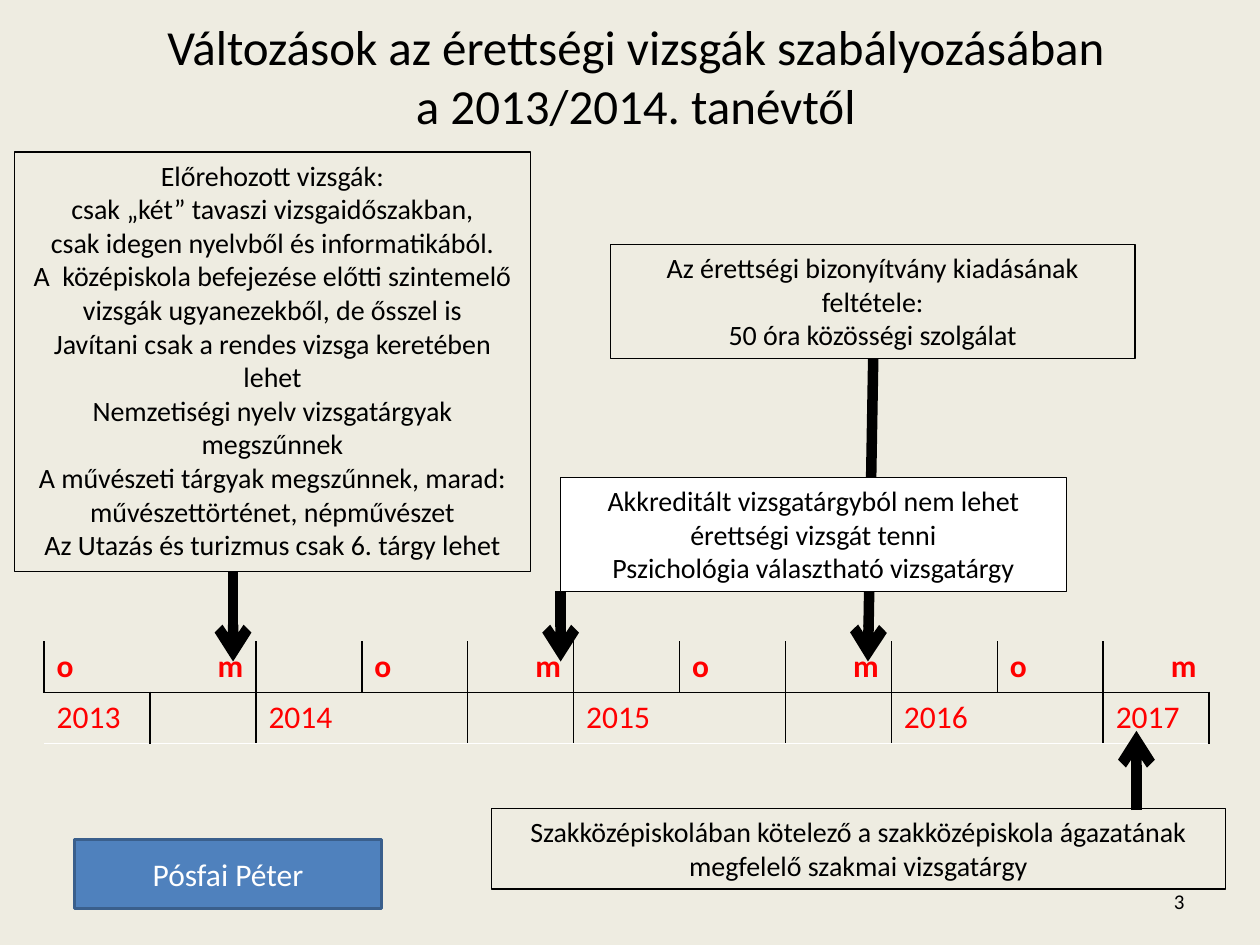
from lxml.etree import SubElement
from pptx import Presentation
from pptx.dml.color import RGBColor
from pptx.enum.shapes import MSO_CONNECTOR as Connector, MSO_SHAPE as Shape
from pptx.enum.text import MSO_ANCHOR as Anchor, MSO_AUTO_SIZE as AutoSize, PP_ALIGN as Align
from pptx.oxml.ns import qn
from pptx.util import Pt

COLORS = {"paper": "EEECE1", "ink": "000000", "exam": "FF0000",
          "white": "FFFFFF", "badge": "4F81BD", "badge_edge": "3A5F8C"}
FONT = "Calibri"
PLAIN_TABLE = "{2D5ABB26-0587-4C30-8999-92F81FD0307C}"

TITLE = ["Változások az érettségi vizsgák szabályozásában",
         "a 2013/2014. tanévtől"]
EARLY_EXAMS = ["Előrehozott vizsgák:",
               "csak „két” tavaszi vizsgaidőszakban,",
               "csak idegen nyelvből és informatikából.",
               "A  középiskola befejezése előtti szintemelő vizsgák "
               "ugyanezekből, de ősszel is",
               "Javítani csak a rendes vizsga keretében lehet",
               "Nemzetiségi nyelv vizsgatárgyak megszűnnek",
               "A művészeti tárgyak megszűnnek, marad: "
               "művészettörténet, népművészet",
               "Az Utazás és turizmus csak 6. tárgy lehet"]
SERVICE = ["Az érettségi bizonyítvány kiadásának feltétele:",
           "50 óra közösségi szolgálat"]
ACCREDITED = ["Akkreditált vizsgatárgyból nem lehet érettségi vizsgát tenni",
              "Pszichológia választható vizsgatárgy"]
VOCATIONAL = ["Szakközépiskolában kötelező a szakközépiskola ágazatának "
              "megfelelő szakmai vizsgatárgy"]

# Timeline: autumn (o) and spring (m) sessions, every third column
TERMS = 11
SESSIONS = {col: "om"[col % 3] for col in range(TERMS) if col % 3 < 2}
YEARS = {0: "2013", 2: "2014", 5: "2015", 8: "2016", 10: "2017"}
SESSION_EDGES = {0, 2, 3, 5, 6, 8, 9, 10}
YEAR_EDGES = {1, 4, 7, 10, 11}


def rgb(name):
    return RGBColor.from_string(COLORS[name])


def write(frame, lines, size, color="ink", align=Align.CENTER, bold=False):
    frame.text = "\n".join(lines)
    for paragraph in frame.paragraphs:
        paragraph.alignment = align
        for run in paragraph.runs:
            look = {"name": FONT, "size": Pt(size), "bold": bold}
            for attribute, value in look.items():
                setattr(run.font, attribute, value)
            run.font.color.rgb = rgb(color)


def place(shape, left, top, width, height):
    spot = {"left": left, "top": top, "width": width, "height": height}
    for attribute, value in spot.items():
        setattr(shape, attribute, Pt(value))


def add_box(slide, area, lines, size=16, fill=None, edge="ink", weight=0.75,
            color="ink", anchor=Anchor.TOP, fit=AutoSize.SHAPE_TO_FIT_TEXT):
    box = slide.shapes.add_shape(Shape.RECTANGLE, *map(Pt, area))
    box.shadow.inherit = False
    if fill:
        box.fill.solid()
        box.fill.fore_color.rgb = rgb(fill)
    else:
        box.fill.background()
    box.line.color.rgb = rgb(edge)
    box.line.width = Pt(weight)
    write(box.text_frame, lines, size, color)
    layout = {"word_wrap": True, "vertical_anchor": anchor, "auto_size": fit}
    for attribute, value in layout.items():
        setattr(box.text_frame, attribute, value)


def add_arrow(slide, start, end):
    arrow = slide.shapes.add_connector(Connector.STRAIGHT, *map(Pt, start + end))
    arrow.line.color.rgb = rgb("ink")
    arrow.line.width = Pt(6)
    properties = arrow.element.spPr
    SubElement(properties.find(qn("a:ln")), qn("a:tailEnd"), type="arrow")
    SubElement(properties, qn("a:effectLst"))


def set_borders(cell, borders):
    """borders maps L, R, T, B, in that order, to colour names."""
    properties = cell._tc.get_or_add_tcPr()
    for side, color in borders.items():
        line = SubElement(properties, qn(f"a:ln{side}"), w=str(Pt(1)))
        fill = SubElement(line, qn("a:solidFill"))
        SubElement(fill, qn("a:srgbClr"), val=COLORS[color])


def add_timeline(slide):
    frame = slide.shapes.add_table(2, TERMS, Pt(25.2), Pt(366.5),
                                   Pt(666), Pt(58.4))
    for style in frame.element.iter(qn("a:tableStyleId")):
        style.text = PLAIN_TABLE
    timeline = frame.table
    timeline.first_row = timeline.horz_banding = False
    rows = [(SESSIONS, SESSION_EDGES, {"B": "ink"}, True),
            (YEARS, YEAR_EDGES, {"T": "ink", "B": "white"}, False)]
    for row, (labels, edges, level_lines, bold) in enumerate(rows):
        for col in range(TERMS):
            cell = timeline.cell(row, col)
            sides = {side: "ink" for side, edge in (("L", col), ("R", col + 1))
                     if edge in edges}
            set_borders(cell, {**sides, **level_lines})
            cell.fill.background()
            label = labels.get(col, "")
            align = Align.RIGHT if label == "m" else Align.LEFT
            write(cell.text_frame, [label], 18, "exam", align, bold)


def main():
    prs = Presentation()
    prs.slide_width, prs.slide_height = Pt(720), Pt(540)
    slide = prs.slides.add_slide(prs.slide_layouts[5])
    slide.background.fill.solid()
    slide.background.fill.fore_color.rgb = rgb("paper")

    # Title
    title = slide.shapes.title
    place(title, 65.5, 9.4, 595.5, 67)
    write(title.text_frame, TITLE, 28)
    title.text_frame.auto_size = AutoSize.NONE
    title.text_frame.vertical_anchor = Anchor.MIDDLE

    # Timeline, with the arrows that point at its sessions
    add_arrow(slide, (499, 205), (496, 378))
    add_timeline(slide)
    add_arrow(slide, (133.2, 327), (133.2, 378))
    add_arrow(slide, (320.4, 338), (320.4, 378))
    add_arrow(slide, (649.4, 463), (649.4, 417.6))

    # Explanations of the changes
    add_box(slide, (8.4, 86.9, 294.7, 239.8), EARLY_EXAMS)
    add_box(slide, (348.7, 139.8, 300, 65.2), SERVICE)
    add_box(slide, (280.8, 462, 419.5, 46), VOCATIONAL)
    add_box(slide, (320.2, 272.9, 289.3, 65.2), ACCREDITED, fill="white")

    # Slide number and presenter
    number = slide.shapes.add_textbox(Pt(516), Pt(500.5), Pt(168), Pt(28.8))
    number.text_frame.word_wrap = True
    number.text_frame.vertical_anchor = Anchor.MIDDLE
    write(number.text_frame, ["3"], 12, align=Align.RIGHT)
    add_box(slide, (42.5, 479.7, 175.7, 39.6), ["Pósfai Péter"], size=18,
            fill="badge", edge="badge_edge", weight=2, color="white",
            anchor=Anchor.MIDDLE, fit=AutoSize.NONE)

    prs.save("out.pptx")


if __name__ == "__main__":
    main()
